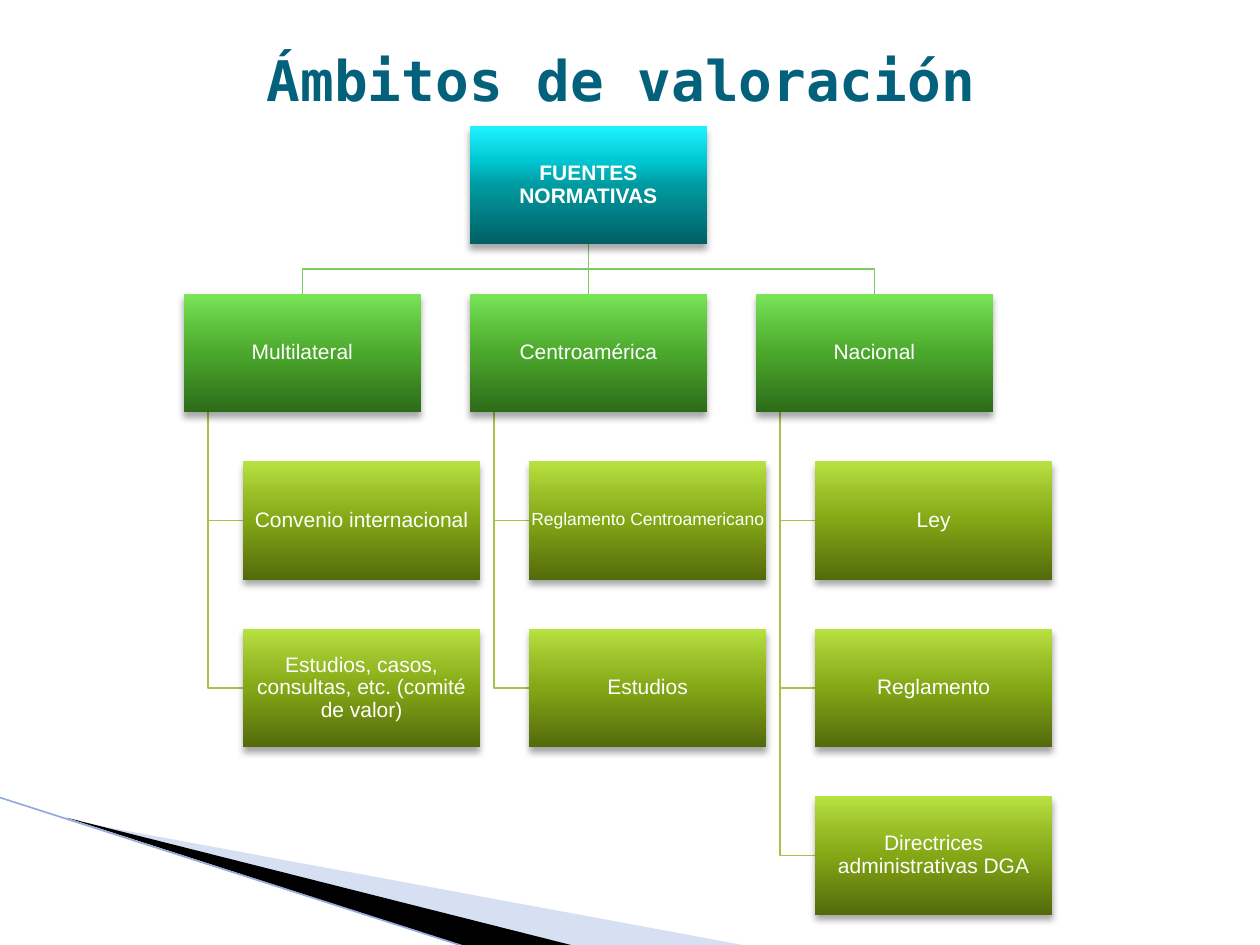
from pptx import Presentation
from pptx.dml.color import RGBColor
from pptx.enum.shapes import MSO_CONNECTOR, MSO_SHAPE
from pptx.enum.text import MSO_ANCHOR, PP_ALIGN
from pptx.oxml import parse_xml
from pptx.oxml.ns import nsdecls, qn
from pptx.util import Inches, Pt

COLORS = {
    "title": "04617B", "text": "FFFFFF",
    "pale": "9DB2E1", "dark": "000000", "edge": "94ABDC",
    "branch": "7CCA62", "leaf": "A5C249", "shadow": "000000",
}
GRADIENTS = {
    "root": ("006064", "009AA1", "00C7D2", "1FF2FF"),
    "branch": ("2D6B19", "4BA82C", "5DBF3D", "78E657"),
    "leaf": ("536A0B", "84A716", "97BC26", "B8E241"),
}
STOPS = (0, 50, 70, 100)
BRANCHES = [
    ("Multilateral", [("Convenio internacional", 12),
                      ("Estudios, casos, consultas, etc. (comité de valor)", 12)]),
    ("Centroamérica", [("Reglamento Centroamericano", 10), ("Estudios", 12)]),
    ("Nacional", [("Ley", 12), ("Reglamento", 12),
                  ("Directrices administrativas DGA", 12)]),
]
BOX_W, BOX_H = 1.88, 0.94
COL_STEP, ROW_STEP = 2.27, 1.33
LEAF_INDENT, TRUNK_INDENT = 0.47, 0.19


def rgb(name):
    return RGBColor.from_string(COLORS[name])


def add_path(slide, points, close=False):
    pts = [(Inches(x), Inches(y)) for x, y in points]
    builder = slide.shapes.build_freeform(*pts[0])
    builder.add_line_segments(pts[1:], close=close)
    sp = builder.convert_to_shape()
    sp.shadow.inherit = False
    return sp


def add_wedge(slide, points, color):
    sp = add_path(slide, points, close=True)
    sp.fill.solid()
    sp.fill.fore_color.rgb = rgb(color)
    sp.line.fill.background()
    return sp


def add_elbow(slide, points, color):
    sp = add_path(slide, points)
    sp.fill.background()
    sp.line.color.rgb = rgb(color)
    sp.line.width = Pt(0.75)


def add_line(slide, start, end, color, width):
    line = slide.shapes.add_connector(
        MSO_CONNECTOR.STRAIGHT, *[Inches(v) for v in start + end])
    line.line.color.rgb = rgb(color)
    line.line.width = Pt(width)
    line._element.spPr.append(parse_xml(f"<a:effectLst {nsdecls('a')}/>"))
    return line


def add_box(slide, x, y, text, kind, size=12, bold=False):
    sp = slide.shapes.add_shape(
        MSO_SHAPE.RECTANGLE, Inches(x), Inches(y), Inches(BOX_W), Inches(BOX_H))
    sp.line.fill.background()
    stops = "".join(
        f'<a:gs pos="{pos * 1000}"><a:srgbClr val="{color}"/></a:gs>'
        for pos, color in zip(STOPS, GRADIENTS[kind]))
    spPr = sp._element.spPr
    spPr.find(qn("a:prstGeom")).addnext(parse_xml(
        f'<a:gradFill {nsdecls("a")} rotWithShape="1"><a:gsLst>{stops}</a:gsLst>'
        '<a:lin ang="16200000" scaled="0"/></a:gradFill>'))
    spPr.append(parse_xml(
        f'<a:effectLst {nsdecls("a")}><a:outerShdw blurRad="{Pt(4)}" dist="{Pt(3)}" '
        f'dir="5400000" rotWithShape="0"><a:srgbClr val="{COLORS["shadow"]}">'
        '<a:alpha val="35000"/></a:srgbClr></a:outerShdw></a:effectLst>'))
    tf = sp.text_frame
    tf.word_wrap = True
    tf.vertical_anchor = MSO_ANCHOR.MIDDLE
    tf.margin_left = tf.margin_right = tf.margin_top = tf.margin_bottom = Inches(0.01)
    p = tf.paragraphs[0]
    p.alignment = PP_ALIGN.CENTER
    p.line_spacing = 0.9
    add_run(p, text, "Arial", size, "text", bold)
    return sp


def add_run(p, text, font, size, color, bold):
    r = p.add_run()
    r.text = text
    r.font.name = font
    r.font.size = Pt(size)
    r.font.bold = bold
    r.font.color.rgb = rgb(color)


def draw_corner(slide, x, y):
    pale = add_wedge(slide, [(x + 0.55, y + 0.18), (x + 5.95, y + 1.18),
                             (x + 4.56, y + 1.18)], "pale")
    pale.fill._xPr.find(qn("a:solidFill"))[0].append(
        parse_xml(f'<a:alpha {nsdecls("a")} val="40000"/>'))
    add_wedge(slide, [(x + 0.53, y + 0.16), (x + 4.57, y + 1.18),
                      (x + 3.72, y + 1.19)], "dark")
    add_line(slide, (x, y), (x + 3.71, y + 1.19), "edge", 0.95)


def draw_title(slide, x, y, w, h):
    title = slide.shapes.title
    title.left, title.top, title.width, title.height = map(Inches, (x, y, w, h))
    tf = title.text_frame
    tf.word_wrap = True
    tf.vertical_anchor = MSO_ANCHOR.MIDDLE
    p = tf.paragraphs[0]
    p.alignment = PP_ALIGN.CENTER
    add_run(p, "Ámbitos de valoración", "DejaVu Sans Mono", 32, "title", True)


def draw_branch(slide, x, y, name, leaves):
    trunk_x, leaf_x = x + TRUNK_INDENT, x + LEAF_INDENT
    tops = [y + ROW_STEP * (i + 1) for i in range(len(leaves))]
    for top in tops:
        mid = top + BOX_H / 2
        add_elbow(slide, [(trunk_x, y + BOX_H), (trunk_x, mid), (leaf_x, mid)], "leaf")
    box = add_box(slide, x, y, name, "branch")
    for top, (text, size) in zip(tops, leaves):
        add_box(slide, leaf_x, top, text, "leaf", size)
    return box


def draw_hierarchy(slide, x, y):
    root_x, branch_y = x + COL_STEP, y + ROW_STEP
    root_mid, root_bottom = root_x + BOX_W / 2, y + BOX_H
    bus_y = (root_bottom + branch_y) / 2
    for side in (-1, 1):
        end_x = root_mid + side * COL_STEP
        add_elbow(slide, [(root_mid, root_bottom), (root_mid, bus_y),
                          (end_x, bus_y), (end_x, branch_y)], "branch")
    stem = add_line(slide, (root_mid, root_bottom), (root_mid, branch_y), "branch", 0.75)
    root = add_box(slide, root_x, y, "FUENTES NORMATIVAS", "root", bold=True)
    boxes = [draw_branch(slide, x + i * COL_STEP, branch_y, name, leaves)
             for i, (name, leaves) in enumerate(BRANCHES)]
    stem.begin_connect(root, 2)
    stem.end_connect(boxes[1], 0)


def main():
    prs = Presentation()
    prs.slide_width, prs.slide_height = Inches(10), Inches(7.5)
    slide = prs.slides.add_slide(prs.slide_layouts[5])
    draw_corner(slide, 0, 6.33)
    draw_hierarchy(slide, 1.46, 1)
    draw_title(slide, 0.43, 0, 9, 1.25)
    prs.save("out.pptx")


if __name__ == "__main__":
    main()
